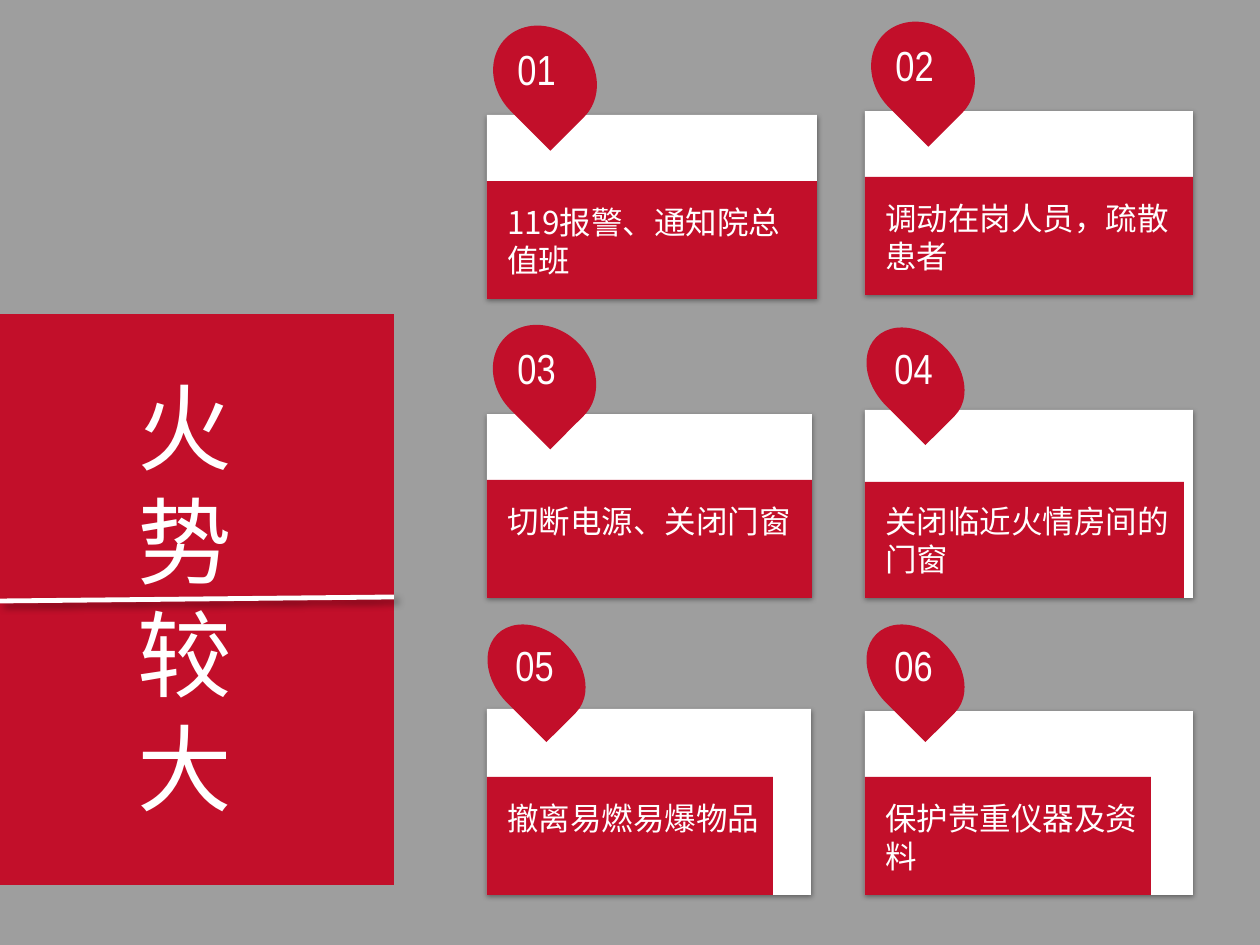
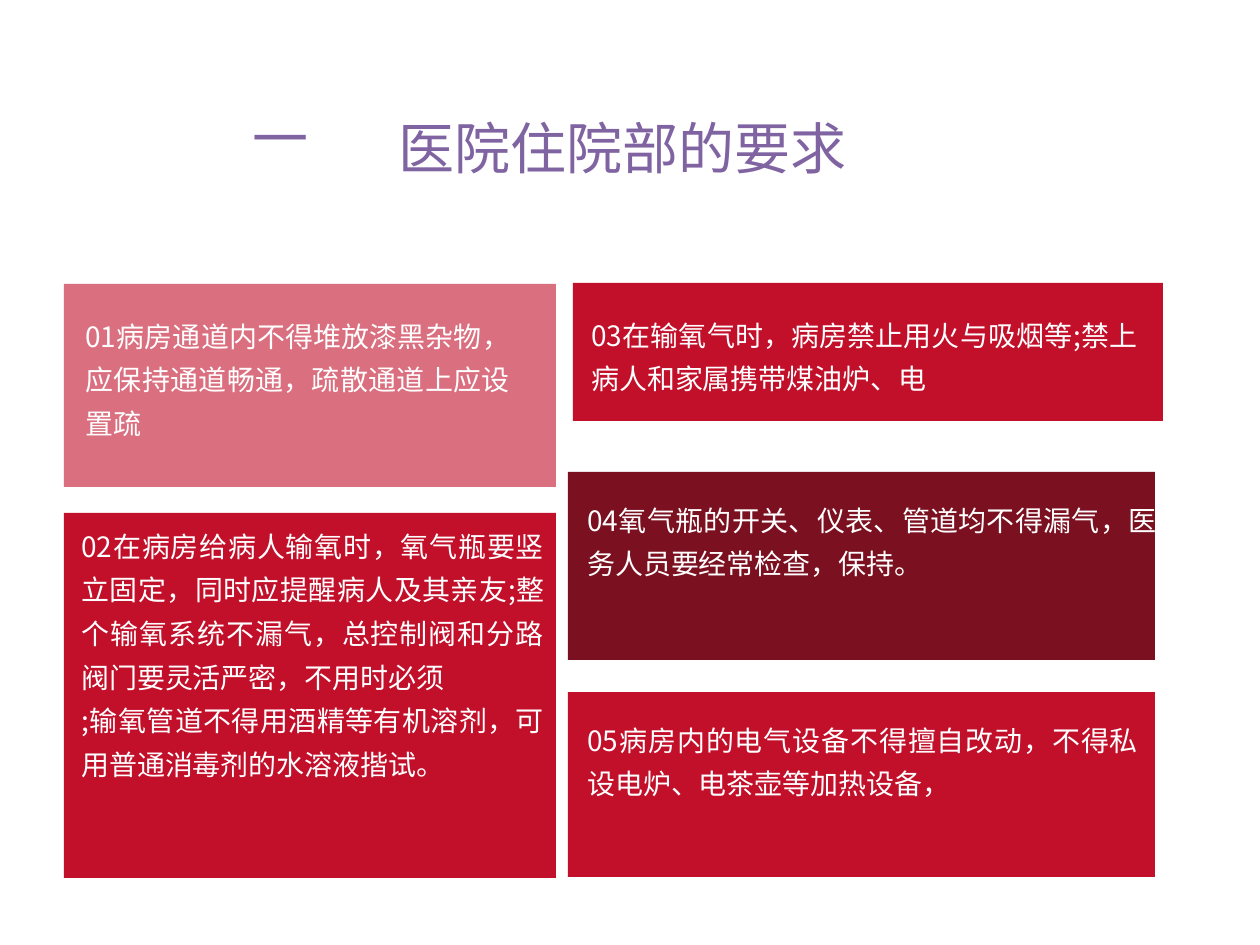
import pptx
import pptx.util
import pptx.dml.color
import pptx.enum.shapes
import pptx.enum.text
import pptx.oxml.ns
from lxml import etree

SCALE = 914400 / 126
HUES = {"red": "C20F2A", "dark": "7B1020", "white": "FFFFFF",
        "black": "000000", "plum": "8064A2"}
SANS = "Noto Sans CJK JP"
TITLE = "Noto Sans CJK SC"
SLIM = "Arial Narrow"
KIND = pptx.enum.shapes.MSO_SHAPE
ALIGN = pptx.enum.text.PP_ALIGN
ANCHOR = pptx.enum.text.MSO_ANCHOR
qn = pptx.oxml.ns.qn

CARDS = [
    ("01", "119报警、通知院总值班", (487, 115, 330, 184), (330, 118), (497, 22, 96)),
    ("02", "调动在岗人员，疏散患者", (865, 111, 328, 184), (328, 118), (875, 18, 96)),
    ("03", "切断电源、关闭门窗", (487, 414, 325, 184), (325, 118), (497, 321, 95)),
    ("04", "关闭临近火情房间的门窗", (865, 410, 328, 188), (319, 116), (874, 321, 83)),
    ("05", "撤离易燃易爆物品", (487, 709, 324, 186), (286, 118), (495, 618, 83)),
    ("06", "保护贵重仪器及资料", (865, 711, 328, 184), (286, 118), (874, 618, 83)),
]

RULES = [
    (["01病房通道内不得堆放漆黑杂物，应保持通道畅通，疏散通道上应设置疏"],
     (64, 284, 492, 203), (73, 303, 450, 160), "red", 60),
    (["02在病房给病人输氧时，氧气瓶要竖立固定，同时应提醒病人及其亲友;"
      "整个输氧系统不漏气，总控制阀和分路阀门要灵活严密，不用时必须",
      ";输氧管道不得用酒精等有机溶剂，可用普通消毒剂的水溶液揩试。"],
     (64, 513, 492, 365), (69, 513, 488, 365), "red", 100),
    (["03在输氧气时，病房禁止用火与吸烟等;禁上病人和家属携带煤油炉、电"],
     (573, 283, 590, 138), (579, 302, 571, 119), "red", 100),
    (["04氧气瓶的开关、仪表、管道均不得漏气，医务人员要经常检查，保持。"],
     (568, 472, 587, 188), (575, 487, 595, 173), "dark", 100),
    (["05病房内的电气设备不得擅自改动，不得私设电炉、电茶壶等加热设备，"],
     (568, 692, 587, 185), (575, 707, 576, 142), "red", 100),
]


def px(num):
    return pptx.util.Emu(round(num * SCALE))


def hue(name):
    return pptx.dml.color.RGBColor.from_string(HUES[name])


def block(shapes, place, tone, kind=KIND.RECTANGLE, solid=100):
    shape = shapes.add_shape(kind, *map(px, place))
    shape.shadow.inherit = False
    shape.fill.solid()
    shape.fill.fore_color.rgb = hue(tone)
    shape.line.fill.background()
    if solid < 100:
        tint = next(shape.element.iter(qn("a:srgbClr")))
        etree.SubElement(tint, qn("a:alpha"), val=str(solid * 1000))
    return shape


def shade(shape, blur, dist, angle):
    props = shape.element.find(qn("p:spPr"))
    effect = props.find(qn("a:effectLst"))
    if effect is None:
        effect = etree.SubElement(props, qn("a:effectLst"))
    cast = etree.SubElement(
        effect, qn("a:outerShdw"), blurRad=str(blur * 12700),
        dist=str(dist * 12700), dir=str(angle * 60000),
        algn="t", rotWithShape="0")
    tint = etree.SubElement(cast, qn("a:srgbClr"), val=HUES["black"])
    etree.SubElement(tint, qn("a:alpha"), val="40000")


def write(shape, lines, size, face=SANS, tone="white", align=ALIGN.LEFT,
          gap=None, anchor=ANCHOR.TOP):
    frame = shape.text_frame
    frame.text = "\n".join(lines)
    frame.word_wrap = True
    frame.auto_size = pptx.enum.text.MSO_AUTO_SIZE.NONE
    frame.vertical_anchor = anchor
    for para in frame.paragraphs:
        para.alignment = align
        para.line_spacing = gap
        para.font.size = pptx.util.Pt(size)
        para.font.name = face
        para.font.color.rgb = hue(tone)
    for props in shape.element.iter(qn("a:defRPr")):
        etree.SubElement(props, qn("a:ea"), typeface=face)


def label(shapes, place, lines, size, **style):
    box = shapes.add_textbox(*map(px, place))
    write(box, lines, size, **style)


def head(slide, place, lines, size, **style):
    title = slide.shapes.title
    title.left, title.top, title.width, title.height = map(px, place)
    write(title, lines, size, **style)
    title.element.getparent().append(title.element)


def card(slide, num, text, place, band, pin):
    shapes = slide.shapes.add_group_shape().shapes
    left, top, wide, high = place
    base = top + high
    shade(block(shapes, place, "white"), 3, 1, 90)
    block(shapes, (left, base - band[1], *band), "red")
    x, y, span = pin
    drop = block(shapes, (x, y, span, 111), "red", KIND.TEAR)
    drop.rotation = 135
    label(shapes, (x + 8, y + 15, span - 10, 63), [num], 24, face=SLIM)
    label(shapes, (left + 8, base - 102, band[0] - 8, 90), [text], 18)


def slash(slide):
    line = slide.shapes.add_connector(
        pptx.enum.shapes.MSO_CONNECTOR.STRAIGHT, *map(px, (0, 601, 394, 597)))
    line.line.color.rgb = hue("white")
    line.line.width = pptx.util.Pt(2.75)
    shade(line, 4, 3, 45)


def fire(slide):
    block(slide.shapes, (0, 0, 1260, 945), "black", solid=38)
    block(slide.shapes, (0, 314, 394, 571), "red")
    head(slide, (45, 363, 280, 504), list("火势较大"), 54, align=ALIGN.CENTER)
    slash(slide)
    for item in CARDS:
        card(slide, *item)


def ward(slide):
    head(slide, (386, 87, 596, 101), ["医院住院部的要求"], 32, face=TITLE,
         tone="plum", align=ALIGN.JUSTIFY, gap=1.3)
    label(slide.shapes, (240, 97, 78, 81), ["一"], 32, tone="plum",
          align=ALIGN.CENTER, anchor=ANCHOR.MIDDLE)
    for lines, panel, place, tone, solid in RULES:
        shapes = slide.shapes.add_group_shape().shapes
        block(shapes, panel, tone, solid=solid)
        label(shapes, place, lines, 16, align=ALIGN.JUSTIFY, gap=1.3)


def main():
    deck = pptx.Presentation()
    deck.slide_width, deck.slide_height = px(1260), px(945)
    for build in (fire, ward):
        build(deck.slides.add_slide(deck.slide_layouts[5]))
    deck.save("out.pptx")


if __name__ == "__main__":
    main()
